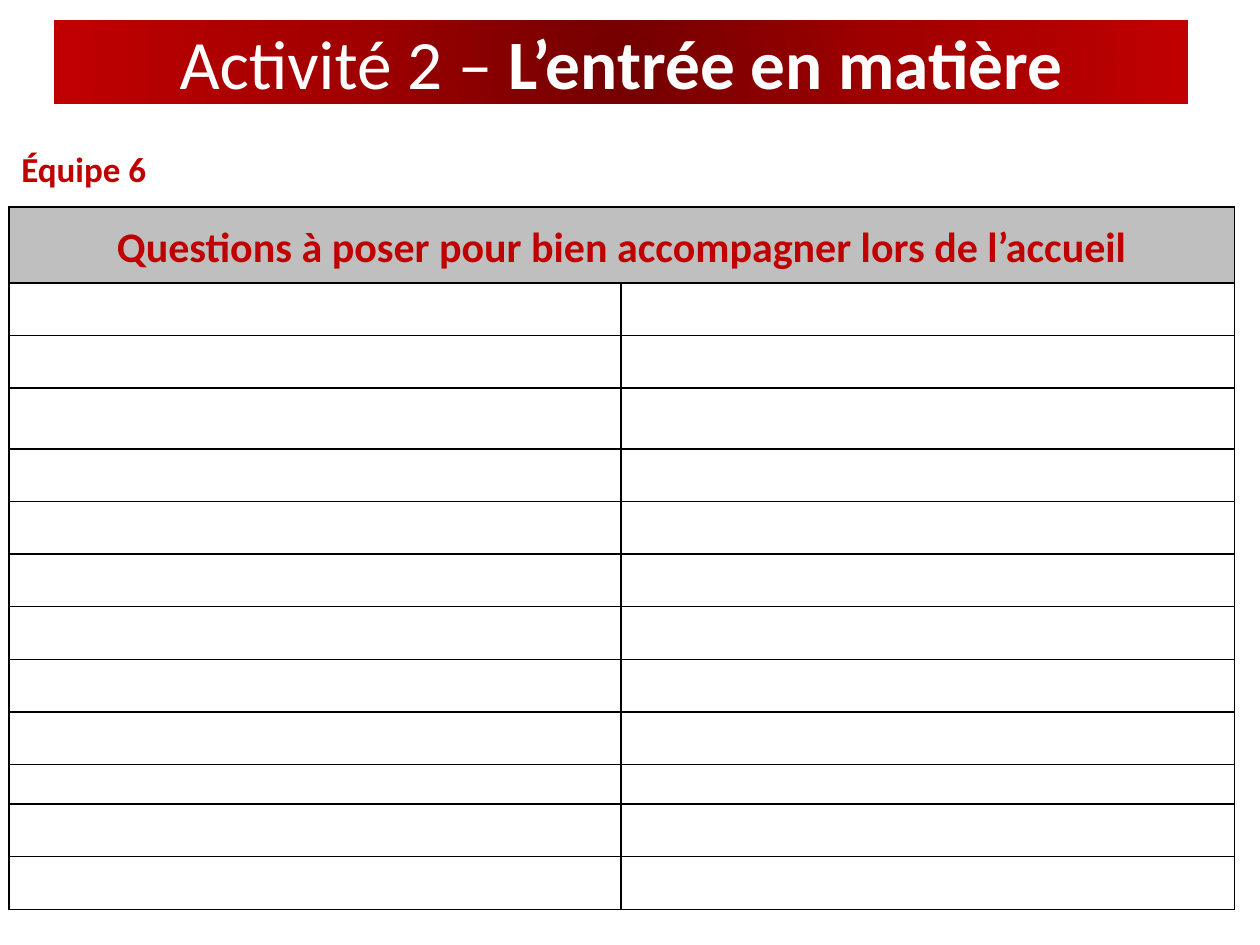
"""Build the worksheet slide for team 6: title banner, team label and question table."""
from dataclasses import dataclass

from lxml import etree
from pptx import Presentation
from pptx import util as u
from pptx.dml.color import RGBColor
from pptx.enum import text
from pptx.oxml import ns, parse_xml


@dataclass(frozen=True)
class Theme:
    font: str = "Calibri"
    white: str = "FFFFFF"
    red: str = "C00000"
    grey: str = "BFBFBF"
    line: str = "000000"
    banner: tuple = ((0, "720000"), (50, "A20000"), (100, "C00000"))
    title: float = 39.6
    heading: float = 24
    label: float = 20
    border: float = 1


theme = Theme()


def style(r, size, color, bold):
    r.font.name = theme.font
    r.font.size = u.Pt(size)
    r.font.bold = bold
    r.font.color.rgb = RGBColor.from_string(color)


def add_borders(cell):
    tc_pr = cell._tc.get_or_add_tcPr()
    for side in ("lnL", "lnR", "lnT", "lnB"):
        ln = etree.SubElement(tc_pr, ns.qn(f"a:{side}"), w=str(u.Pt(theme.border)))
        fill = etree.SubElement(ln, ns.qn("a:solidFill"))
        etree.SubElement(fill, ns.qn("a:srgbClr"), val=theme.line)


prs = Presentation()
prs.slide_width, prs.slide_height = u.Cm(25.4), u.Cm(19.05)
s = prs.slides.add_slide(prs.slide_layouts[5])

sp = s.shapes.title
sp.left, sp.top, sp.width, sp.height = u.Cm(1.09), u.Cm(0.41), u.Cm(22.86), u.Cm(1.68)
stops = "".join(
    f'<a:gs pos="{pos * 1000}"><a:srgbClr val="{color}"/></a:gs>' for pos, color in theme.banner
)
sp.element.spPr.append(parse_xml(
    f'<a:gradFill {ns.nsdecls("a")} rotWithShape="1"><a:gsLst>{stops}</a:gsLst>'
    '<a:path path="circle"><a:fillToRect l="50000" t="50000" r="50000" b="50000"/></a:path>'
    '</a:gradFill>'
))
tf = sp.text_frame
tf.auto_size = text.MSO_AUTO_SIZE.NONE
tf.vertical_anchor = text.MSO_ANCHOR.MIDDLE
p = tf.paragraphs[0]
p.alignment = text.PP_ALIGN.CENTER
for words, bold in (("Activité 2 – ", False), ("L’entrée en matière", True)):
    r = p.add_run()
    r.text = words
    style(r, theme.title, theme.white, bold)

row_heights = [1.53] + [1.06] * 12
row_heights[3], row_heights[10] = 1.23, 0.8
col_widths = [12.34, 12.37]
table = s.shapes.add_table(
    len(row_heights), len(col_widths), u.Cm(0.18), u.Cm(4.17),
    u.Cm(sum(col_widths)), u.Cm(sum(row_heights)),
).table
table.first_row = table.horz_banding = False
for col, width in zip(table.columns, col_widths):
    col.width = u.Cm(width)
for row, height in zip(table.rows, row_heights):
    row.height = u.Cm(height)
for cell in table.iter_cells():
    cell.margin_top = cell.margin_bottom = 0
    cell.margin_left = cell.margin_right = u.Cm(0.18)
    add_borders(cell)
    cell.fill.background()

heading = table.cell(0, 0)
heading.merge(table.cell(0, 1))
heading.fill.solid()
heading.fill.fore_color.rgb = RGBColor.from_string(theme.grey)
heading.vertical_anchor = text.MSO_ANCHOR.MIDDLE
p = heading.text_frame.paragraphs[0]
p.text = "Questions à poser pour bien accompagner lors de l’accueil"
p.alignment = text.PP_ALIGN.CENTER
p.line_spacing = 1.15
p.space_after = u.Pt(10)
style(p.runs[0], theme.heading, theme.red, True)

sp = s.shapes.add_textbox(u.Cm(0.18), u.Cm(2.84), u.Cm(7.14), u.Cm(1.12))
tf = sp.text_frame
tf.word_wrap = True
tf.auto_size = text.MSO_AUTO_SIZE.SHAPE_TO_FIT_TEXT
tf.text = "Équipe 6"
style(tf.paragraphs[0].runs[0], theme.label, theme.red, True)

prs.save("out.pptx")
